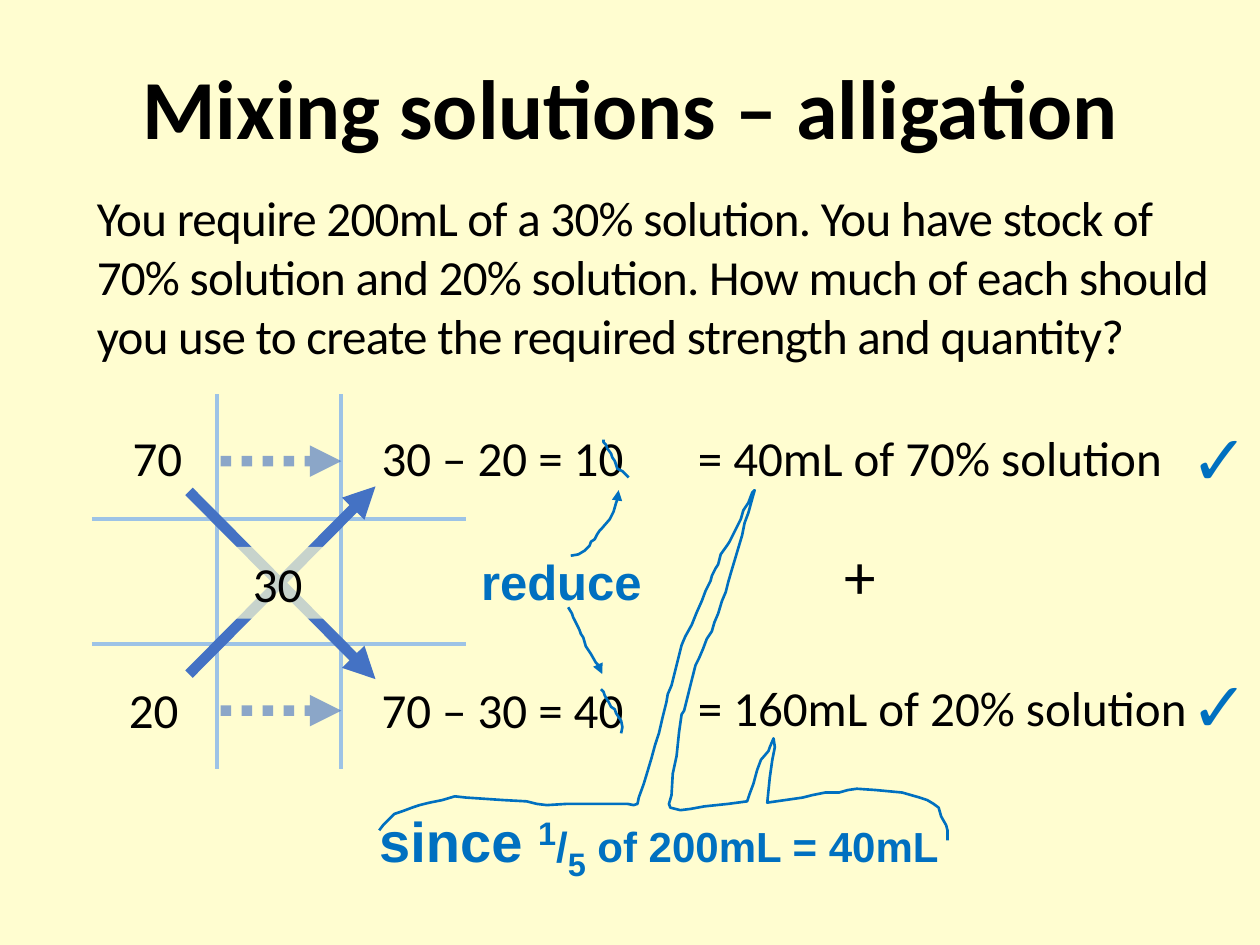
from dataclasses import dataclass

from lxml.etree import SubElement
from pptx import Presentation
from pptx.dml.color import RGBColor
from pptx.enum.dml import MSO_LINE
from pptx.enum.shapes import MSO_CONNECTOR, MSO_SHAPE
from pptx.enum.text import MSO_ANCHOR, PP_ALIGN
from pptx.oxml.ns import qn
from pptx.util import Inches, Pt

UNIT = Inches(0.01)
COLUMNS, ROWS = 1000, 750
CREAM = RGBColor(0xFF, 0xFD, 0xD0)
BLACK = RGBColor(0, 0, 0)
PALE_BLUE = RGBColor(0x9D, 0xC3, 0xE6)
ARROW_BLUE = RGBColor(0x44, 0x72, 0xC4)
INK_BLUE = RGBColor(0, 0x70, 0xC0)

BODY = {"name": "Calibri", "size": Pt(28), "bold": False}
TITLE = {"name": "Calibri", "size": Pt(48), "bold": True}
PLUS = {"name": "Calibri", "size": Pt(36), "bold": False}
TICK = {"name": "Calibri", "size": Pt(40), "bold": False}
NOTE = {"name": "Arial", "size": Pt(28), "bold": True}
NOTE_LARGE = {"name": "Arial", "size": Pt(32), "bold": True}
NOTE_SMALL = {"name": "Arial", "size": Pt(24), "bold": True}

ZERO_STRIKES = [
    [(499, 379), (494, 374), (490, 372), (488, 366), (486, 363), (485, 360),
     (482, 356), (481, 353), (479, 351), (479, 349)],
    [(493, 582), (494, 577), (493, 572), (489, 566), (488, 563), (485, 561),
     (483, 557), (480, 552), (479, 549), (477, 547)],
]
REDUCE_ARROWS = [
    [(453, 441), (459, 440), (464, 437), (468, 433), (469, 430), (472, 428),
     (474, 424), (476, 421), (478, 419), (484, 412), (487, 406), (489, 399),
     (491, 394), (491, 389)],
    [(451, 482), (454, 487), (455, 490), (457, 494), (460, 500), (461, 503),
     (463, 506), (465, 513), (469, 519), (473, 526), (476, 529), (478, 535)],
]
SHARED_BRACE = [
    (301, 659), (304, 655), (310, 649), (313, 646), (319, 644), (327, 641),
    (333, 639), (341, 637), (351, 635), (361, 632), (370, 633), (400, 635),
    (418, 636), (426, 638), (434, 639), (450, 638), (498, 638), (503, 639),
    (506, 638), (507, 633), (511, 622), (514, 612), (517, 602), (520, 591),
    (523, 582), (526, 569), (529, 557), (530, 551), (533, 544), (536, 532),
    (539, 520), (541, 512), (544, 505), (549, 496), (553, 486), (557, 477),
    (560, 469), (564, 461), (565, 457), (568, 451), (570, 448), (572, 440),
    (577, 433), (579, 430), (585, 418), (588, 412), (590, 405), (594, 399),
    (597, 391), (599, 389), (597, 396), (594, 407), (591, 415), (589, 425),
    (586, 435), (583, 445), (580, 455), (578, 462), (576, 470), (573, 477),
    (570, 487), (567, 494), (565, 501), (561, 507), (558, 515), (555, 522),
    (552, 528), (549, 540), (546, 552), (543, 564), (541, 567), (539, 581),
    (537, 600), (534, 614), (533, 631), (531, 638), (532, 641), (540, 643),
    (548, 642), (559, 640), (578, 638), (593, 636), (595, 630), (598, 622),
    (601, 611), (604, 603), (610, 596), (611, 593), (614, 586), (615, 593),
    (613, 603), (611, 617), (609, 637), (637, 633), (645, 631), (655, 629),
    (666, 629), (673, 627), (680, 626), (695, 627), (716, 629), (730, 633),
    (736, 635), (741, 638), (745, 641), (747, 648), (751, 655), (752, 659),
    (752, 667),
]


@dataclass(frozen=True)
class Box:
    """Hold a region in columns and rows of the slide grid."""
    left: int
    top: int
    width: int
    height: int

    def inner(self, left, top, width, height):
        """Return a box placed relative to this one."""
        return Box(self.left + left, self.top + top, width, height)

    def lengths(self):
        """Return position and size as slide lengths."""
        return [round(part * UNIT) for part in (self.left, self.top, self.width, self.height)]

    def points(self, points):
        """Return points shifted from this box to the slide."""
        return [(self.left + x, self.top + y) for x, y in points]


def write(shape, runs, color=BLACK, wrap=True, **paragraph_format):
    """Write one paragraph of (text, font values, run attributes) into a shape."""
    frame = shape.text_frame
    frame.word_wrap = wrap
    frame.vertical_anchor = MSO_ANCHOR.TOP
    paragraph = frame.paragraphs[0]
    for key, value in paragraph_format.items():
        setattr(paragraph, key, value)
    for text, font_format, attributes in runs:
        run = paragraph.add_run()
        run.text = text
        for key, value in font_format.items():
            setattr(run.font, key, value)
        run.font.color.rgb = color
        for key, value in attributes.items():
            run.font._element.set(key, value)


def add_label(slide, box, text, font_format=BODY, **options):
    """Add a text box holding one run and return it."""
    label = slide.shapes.add_textbox(*box.lengths())
    write(label, [(text, font_format, {})], **options)
    return label


def add_arrowhead(line):
    """Put a triangle at the end of a line."""
    SubElement(line._get_or_add_ln(), qn("a:tailEnd"), type="triangle")


def set_opacity(fill, percent):
    """Make a solid fill partly transparent."""
    color = fill._xPr.find(qn("a:solidFill"))[0]
    SubElement(color, qn("a:alpha"), val=str(percent * 1000))


def add_line(slide, box, start, end, color, width, arrow=False, dotted=False):
    """Draw a straight line between two points of a box."""
    ends = [round(part * UNIT) for point in box.points([start, end]) for part in point]
    connector = slide.shapes.add_connector(MSO_CONNECTOR.STRAIGHT, *ends)
    connector.line.color.rgb = color
    connector.line.width = Pt(width)
    if dotted:
        connector.line.dash_style = MSO_LINE.ROUND_DOT
        set_opacity(connector.line.fill, 61)
    if arrow:
        add_arrowhead(connector.line)
    SubElement(connector._element.spPr, qn("a:effectLst"))


def add_stroke(slide, box, points, arrow=False):
    """Draw an open pen stroke through points of a box."""
    first, *others = box.points(points)
    builder = slide.shapes.build_freeform(*first, scale=UNIT)
    builder.add_line_segments(others, close=False)
    stroke = builder.convert_to_shape()
    stroke.shadow.inherit = False
    stroke.fill.background()
    stroke.line.color.rgb = INK_BLUE
    stroke.line.width = Pt(1.5)
    if arrow:
        add_arrowhead(stroke.line)


def add_heading(slide, box):
    """Place the title above the question."""
    title = add_label(slide, box.inner(0, 0, 945, 98), "Mixing solutions – alligation",
                      TITLE, alignment=PP_ALIGN.CENTER, line_spacing=0.9)
    title.text_frame.vertical_anchor = MSO_ANCHOR.MIDDLE
    question = slide.shapes.add_textbox(*box.inner(39, 104, 914, 503).lengths())
    text = ("You require 200mL of a 30% solution. You have stock of 70% solution and "
            "20% solution. How much of each should you use to create the required "
            "strength and quantity?")
    write(question, [(text, BODY, {"spc": "-40"})], space_before=Pt(15))


def add_alligation_grid(slide, box):
    """Draw the three by three grid with its numbers and arrows."""
    cell = box.width // 3
    for step in (cell, 2 * cell):
        add_line(slide, box, (step, 0), (step, box.height), PALE_BLUE, 2.25)
        add_line(slide, box, (0, step), (box.width, step), PALE_BLUE, 2.25)
    for start, end in ((77, 226), (222, 73)):
        add_line(slide, box, (77, start), (225, end), ARROW_BLUE, 6, arrow=True)
    for row, (number, left) in enumerate((("70", 12), ("20", 9))):
        top = 21 + row * 200
        add_label(slide, box.inner(left, top, 80, 57), number, alignment=PP_ALIGN.CENTER)
        dots = 53 + row * 198
        add_line(slide, box, (102, dots), (198, dots), ARROW_BLUE, 6, arrow=True, dotted=True)
    target = slide.shapes.add_shape(MSO_SHAPE.RECTANGLE, *box.inner(109, 121, 77, 57).lengths())
    target.shadow.inherit = False
    target.fill.solid()
    target.fill.fore_color.rgb = CREAM
    set_opacity(target.fill, 70)
    target.line.fill.background()
    write(target, [("30", BODY, {})], alignment=PP_ALIGN.CENTER)


def add_results(slide, box):
    """Place each difference, its volume and its tick on one row."""
    rows = (("30 – 20 = 10", "= 40mL of 70% solution"),
            ("70 – 30 = 40", "= 160mL of 20% solution"))
    for row, (difference, volume) in enumerate(rows):
        top = 9 + row * 200
        add_label(slide, box.inner(0, top, 254, 57), difference)
        add_label(slide, box.inner(251, top - row, 429, 57), volume)
        add_label(slide, box.inner(642, row * 196, 64, 77), "✓", TICK,
                  color=INK_BLUE, wrap=False)
    add_label(slide, box.inner(367, 96, 59, 71), "+", PLUS)


def add_handwriting(slide, box):
    """Add the blue notes and the pen strokes that link them."""
    add_label(slide, box.inner(353, 433, 185, 57), "reduce", NOTE,
              color=INK_BLUE, alignment=PP_ALIGN.CENTER)
    reason = slide.shapes.add_textbox(*box.inner(244, 635, 558, 64).lengths())
    runs = [("since ", NOTE_LARGE, {}), ("1", NOTE_LARGE, {"baseline": "30000"}),
            ("/", NOTE_SMALL, {}), ("5", NOTE_LARGE, {"baseline": "-25000"}),
            (" of 200mL = 40mL", NOTE_SMALL, {})]
    write(reason, runs, color=INK_BLUE, alignment=PP_ALIGN.CENTER)
    for points in [*ZERO_STRIKES, SHARED_BRACE]:
        add_stroke(slide, box, points)
    for points in REDUCE_ARROWS:
        add_stroke(slide, box, points, arrow=True)


def main():
    """Build and save the slide."""
    presentation = Presentation()
    presentation.slide_width = COLUMNS * UNIT
    presentation.slide_height = ROWS * UNIT
    slide = presentation.slides.add_slide(presentation.slide_layouts[6])
    slide.background.fill.solid()
    slide.background.fill.fore_color.rgb = CREAM
    add_heading(slide, Box(28, 40, 945, 607))
    add_alligation_grid(slide, Box(73, 313, 297, 297))
    add_results(slide, Box(293, 325, 707, 273))
    add_handwriting(slide, Box(0, 0, COLUMNS, ROWS))
    presentation.save("out.pptx")


if __name__ == "__main__":
    main()
